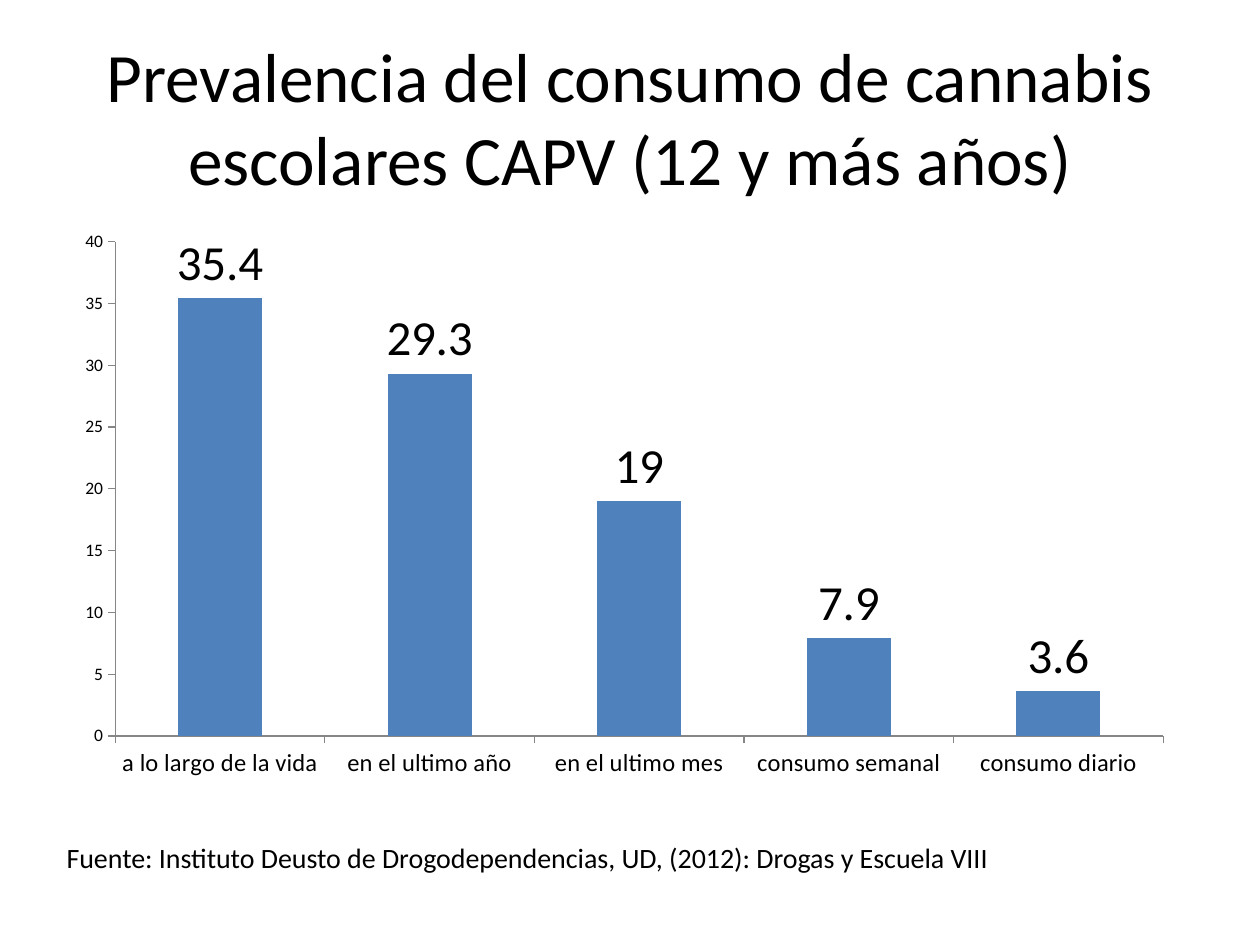
from dataclasses import dataclass

from pptx import Presentation
from pptx.chart.data import CategoryChartData
from pptx.dml.color import RGBColor
from pptx.enum.chart import XL_CHART_TYPE, XL_LABEL_POSITION, XL_TICK_MARK
from pptx.enum.text import MSO_ANCHOR, PP_ALIGN
from pptx.util import Inches, Pt

# Content
TITLE = "Prevalencia del consumo de cannabis\vescolares CAPV (12 y más años)"
SOURCE = "Fuente: Instituto Deusto de Drogodependencias, UD, (2012): Drogas y Escuela VIII"
PREVALENCE = {
    "a lo largo de la vida": 35.4,
    "en el ultimo año": 29.3,
    "en el ultimo mes": 19,
    "consumo semanal": 7.9,
    "consumo diario": 3.6,
}

# Positions: left, top, width, height in inches
TITLE_BOX = (0.5, 0.3, 9, 1.25)
CHART_BOX = (0.5, 1.75, 8.91, 4.52)
SOURCE_BOX = (0.43, 6.62, 8.27, 0.37)


@dataclass(frozen=True)
class Theme:
    font: str = "Calibri"
    text: RGBColor = RGBColor(0x00, 0x00, 0x00)
    bar: RGBColor = RGBColor(0x4F, 0x81, 0xBD)
    axis: RGBColor = RGBColor(0x86, 0x86, 0x86)
    title_size: float = 39.6
    source_size: float = 16
    value_axis_size: float = 10
    category_size: float = 14
    label_size: float = 28


THEME = Theme()


def style_font(font, size):
    font.name = THEME.font
    font.size = Pt(size)
    font.color.rgb = THEME.text


def add_text(slide, box, text, size, align=PP_ALIGN.LEFT, anchor=MSO_ANCHOR.TOP):
    frame = slide.shapes.add_textbox(*map(Inches, box)).text_frame
    frame.word_wrap = True
    frame.vertical_anchor = anchor
    paragraph = frame.paragraphs[0]
    paragraph.text = text
    paragraph.alignment = align
    style_font(paragraph.font, size)


def style_axis(axis, size):
    axis.has_major_gridlines = False
    axis.major_tick_mark = XL_TICK_MARK.OUTSIDE
    axis.minor_tick_mark = XL_TICK_MARK.NONE
    axis.format.line.color.rgb = THEME.axis
    axis.format.line.width = Pt(0.75)
    style_font(axis.tick_labels.font, size)


def add_prevalence_chart(slide):
    data = CategoryChartData()
    data.categories = list(PREVALENCE)
    data.add_series("Series 1", list(PREVALENCE.values()))
    chart = slide.shapes.add_chart(
        XL_CHART_TYPE.COLUMN_CLUSTERED, *map(Inches, CHART_BOX), data
    ).chart
    chart.has_title = False
    chart.has_legend = False
    style_font(chart.font, THEME.value_axis_size)

    # Axes
    style_axis(chart.category_axis, THEME.category_size)
    style_axis(chart.value_axis, THEME.value_axis_size)
    chart.value_axis.minimum_scale = 0
    chart.value_axis.maximum_scale = 40
    chart.value_axis.major_unit = 5

    # Bars and their values
    plot = chart.plots[0]
    plot.vary_by_categories = False
    plot.gap_width = 150
    series = plot.series[0]
    series.format.fill.solid()
    series.format.fill.fore_color.rgb = THEME.bar
    labels = series.data_labels
    labels.show_value = True
    labels.position = XL_LABEL_POSITION.OUTSIDE_END
    style_font(labels.font, THEME.label_size)


def main():
    presentation = Presentation()
    presentation.slide_width = Inches(10)
    presentation.slide_height = Inches(7.5)
    slide = presentation.slides.add_slide(presentation.slide_layouts[6])

    add_text(slide, TITLE_BOX, TITLE, THEME.title_size, PP_ALIGN.CENTER, MSO_ANCHOR.MIDDLE)
    add_text(slide, SOURCE_BOX, SOURCE, THEME.source_size)
    add_prevalence_chart(slide)

    presentation.save("out.pptx")


if __name__ == "__main__":
    main()
